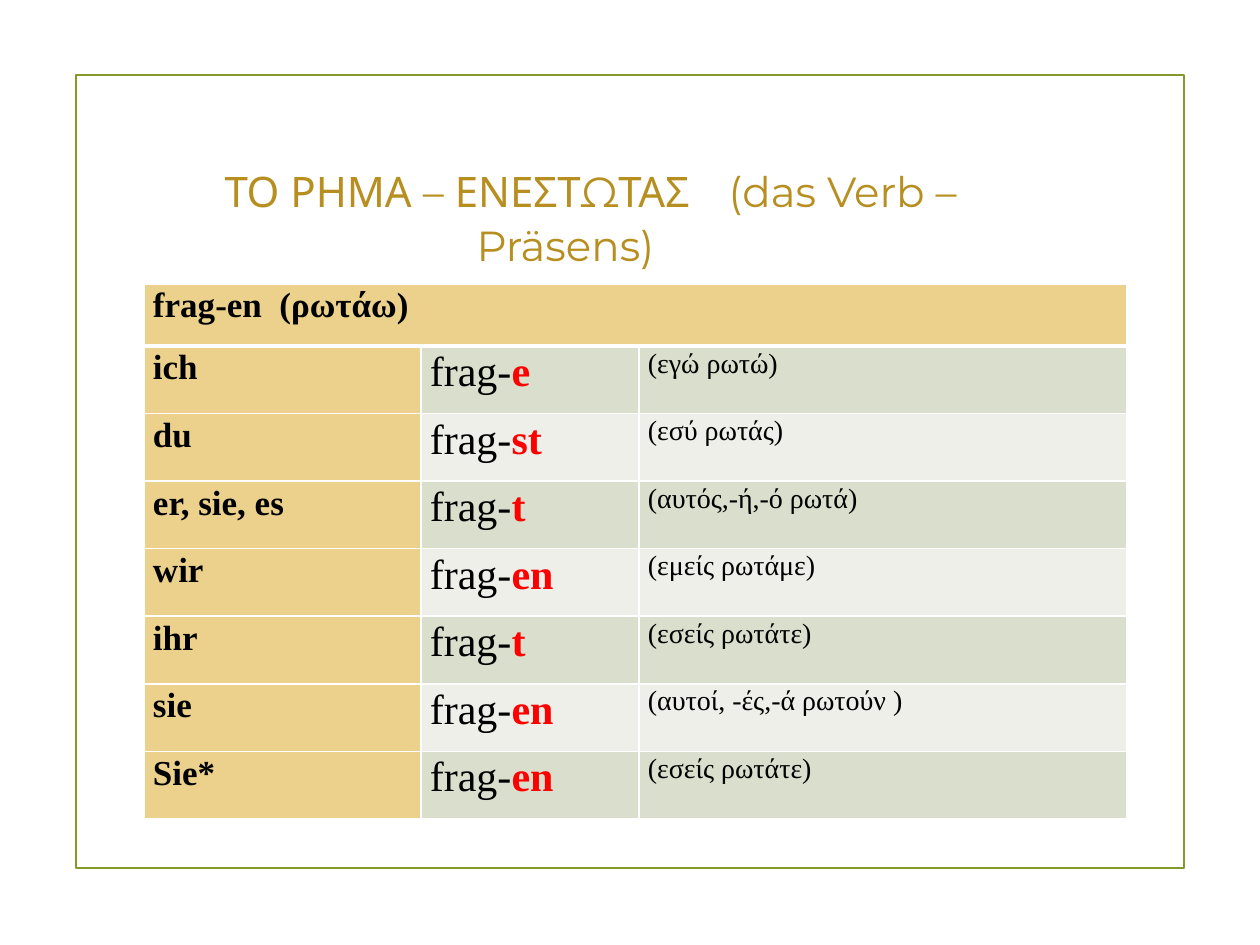
from lxml.etree import SubElement
from pptx import Presentation
from pptx.dml.color import RGBColor
from pptx.enum.shapes import MSO_SHAPE as Shape
from pptx.enum.text import MSO_ANCHOR as Anchor, MSO_AUTO_SIZE as AutoSize, PP_ALIGN as Align
from pptx.oxml import parse_xml
from pptx.oxml.ns import nsdecls, qn
from pptx.util import Emu, Pt

PX = 914400 / 126


def px(length):
    return Emu(round(length * PX))


def rgb(hex_color):
    return RGBColor.from_string(hex_color)


presentation = Presentation()
presentation.slide_width, presentation.slide_height = px(1260), px(945)
slide = presentation.slides.add_slide(presentation.slide_layouts[5])

# Frame, kept behind the title
frame = slide.shapes.add_shape(Shape.RECTANGLE, px(76), px(75), px(1108), px(793))
frame.shadow.inherit = False
frame.fill.background()
frame.line.color.rgb = rgb("83992A")
frame.line.width = Pt(1.25)
title = slide.shapes.title
title._element.addprevious(frame._element)

# Title: a hanging indent and a tab place its two lines
title.left, title.top, title.width, title.height = px(163), px(126), px(937), px(180)
text_frame = title.text_frame
text_frame.auto_size = AutoSize.NONE
text_frame.word_wrap = True
text_frame.vertical_anchor = Anchor.MIDDLE
text_frame.text = "ΤΟ ΡΗΜΑ – ΕΝΕΣΤΩΤΑΣ\t(das Verb –Präsens)"
paragraph = text_frame.paragraphs[0]
properties = paragraph._p.get_or_add_pPr()
properties.set("marL", str(px(301)))
properties.set("indent", str(-px(252)))
tabs = SubElement(properties, qn("a:tabLst"))
SubElement(tabs, qn("a:tab"), pos=str(px(780)), algn="l")
paragraph.alignment = Align.LEFT
paragraph.line_spacing = 1.07
paragraph.space_after = Pt(8)
paragraph.font.size = Pt(24)
paragraph.font.name = "Montserrat"
paragraph.font.color.rgb = rgb("B78E20")

# Conjugation table: pronoun, ending of the verb, translation
conjugation = [
    ("ich", "e", "(εγώ ρωτώ)"),
    ("du", "st", "(εσύ ρωτάς)"),
    ("er, sie, es", "t", "(αυτός,-ή,-ό ρωτά)"),
    ("wir", "en", "(εμείς ρωτάμε)"),
    ("ihr", "t", "(εσείς ρωτάτε)"),
    ("sie", "en", "(αυτοί, -ές,-ά ρωτούν )"),
    ("Sie*", "en", "(εσείς ρωτάτε)"),
]
rows = [[["frag-en  (ρωτάω)"], [], []]]
rows += [[[pronoun], ["frag-", ending], [meaning]] for pronoun, ending, meaning in conjugation]
column_sizes = [20, 24, 16]

table = slide.shapes.add_table(len(rows), 3, px(144), px(284), px(983), px(535)).table
for column, width in zip(table.columns, [277, 218, 488]):
    column.width = px(width)
for index, row in enumerate(table.rows):
    row.height = px(473 / 7) if index else px(62)
table.cell(0, 0).merge(table.cell(0, 2))

for row_index, row in enumerate(rows):
    band = "D9DECD" if row_index % 2 else "EDEFE8"
    for column_index, texts in enumerate(row):
        cell = table.cell(row_index, column_index)
        cell.margin_left = cell.margin_right = px(9)
        cell.margin_top = cell.margin_bottom = 0
        cell.fill.solid()
        cell.fill.fore_color.rgb = rgb("EBD18C" if column_index == 0 or row_index == 0 else band)

        # White borders, thicker below the heading
        for position, side in enumerate("LRTB"):
            heading_edge = (row_index, side) in [(0, "B"), (1, "T")]
            border = parse_xml(
                f'<a:ln{side} {nsdecls("a")} w="{Pt(3 if heading_edge else 1)}"><a:solidFill>'
                f'<a:srgbClr val="FFFFFF"/></a:solidFill></a:ln{side}>')
            cell._tc.get_or_add_tcPr().insert(position, border)

        paragraph = cell.text_frame.paragraphs[0]
        paragraph.alignment = Align.JUSTIFY
        paragraph.line_spacing = 1.07
        paragraph.space_after = Pt(8)
        for run_index, text in enumerate(texts):
            run = paragraph.add_run()
            run.text = text
            run.font.name = "Times New Roman"
            run.font.size = Pt(column_sizes[column_index])
            run.font.bold = column_index == 0 or run_index == 1
            run.font.color.rgb = rgb("FF0000" if run_index else "000000")

presentation.save("out.pptx")
